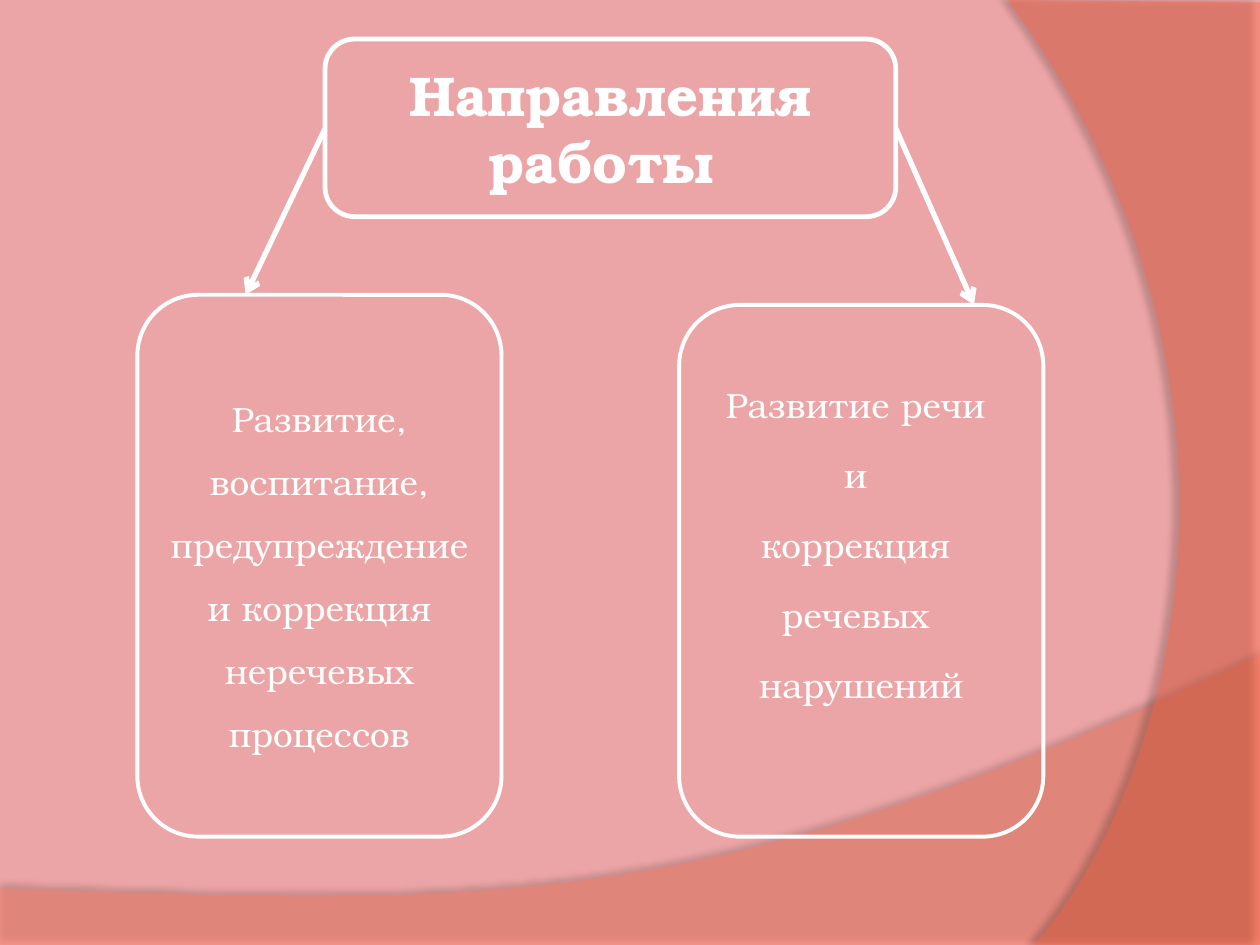
from dataclasses import dataclass

from lxml import etree
from pptx import Presentation
from pptx import util as u
from pptx.dml.color import RGBColor
from pptx.enum import shapes, text
from pptx.oxml import ns

COLORS = {
    "background": "ECA5A6",
    "bottom wave": "FF7E66",
    "side wave": "FF6542",
    "text": "FFFFFF",
    "shadow": "000000",
}
FONT = "TeX Gyre Bonum"
CURVE_STEPS = 32


@dataclass
class Wave:
    color: str
    opacity: int
    corners: list[tuple[float, float]]
    curve: list[tuple[float, float]]  # cubic Bezier from the last corner
    shadow_opacity: int
    shadow_distance: float
    shadow_angle: int


@dataclass
class Panel:
    left: float
    top: float
    width: float
    height: float
    paragraphs: list[str]
    size: int = 20
    bold: bool = False
    outline: float = 2.25
    line_spacing: float = 1.5
    space_before: float = 0
    bottom_inset: float = 0.05


@dataclass
class Arrow:
    start: tuple[float, float]
    end: tuple[float, float]


WAVES = [
    Wave("bottom wave", 45, [(0, 7.05), (0, 7.51), (10, 7.51), (10, 5.2)],
         [(5.59, 7.29), (3.91, 7.19), (0, 7.05)], 35, 3.5, 270),
    Wave("side wave", 40, [(8, 0), (10, 0.02), (10, 7.5), (8.21, 7.5)],
         [(9.35, 6.19), (10.18, 3), (8, 0)], 45, 4, 180),
]
PANELS = [
    Panel(2.58, 0.31, 4.53, 1.41, ["Направления работы "],
          size=32, bold=True, outline=2.75, line_spacing=1),
    Panel(1.09, 2.34, 2.89, 4.3,
          ["Развитие, воспитание, предупреждение и коррекция неречевых процессов"]),
    Panel(5.39, 2.42, 2.89, 4.22,
          ["Развитие речи ", "и ", "коррекция ", "речевых ", "нарушений"],
          space_before=4, bottom_inset=0.63),
]
ARROWS = [
    Arrow((2.58, 1.02), (1.95, 2.34)),
    Arrow((7.11, 1.02), (7.73, 2.42)),
]


def rgb(name: str) -> RGBColor:
    return RGBColor.from_string(COLORS[name])


def add_xml(parent, tag: str, **attributes):
    values = {key: str(value) for key, value in attributes.items()}
    return etree.SubElement(parent, ns.qn(tag), values)


def bezier(points: list[tuple[float, float]]) -> list[tuple[float, float]]:
    """Points along a cubic curve, without its first point."""
    samples = []
    for step in range(1, CURVE_STEPS + 1):
        t = step / CURVE_STEPS
        weights = ((1 - t) ** 3, 3 * t * (1 - t) ** 2, 3 * t**2 * (1 - t), t**3)
        samples.append(tuple(sum(w * point[axis] for w, point in zip(weights, points))
                             for axis in (0, 1)))
    return samples


def draw_wave(page, wave: Wave) -> None:
    outline = wave.corners + bezier([wave.corners[-1], *wave.curve])
    vertices = [(u.Inches(x), u.Inches(y)) for x, y in outline]
    builder = page.shapes.build_freeform(*vertices[0])
    builder.add_line_segments(vertices[1:], close=True)
    shape = builder.convert_to_shape()
    shape.fill.solid()
    shape.fill.fore_color.rgb = rgb(wave.color)
    shape.line.fill.background()
    shape.shadow.inherit = False

    # Transparency and soft shadow
    properties = shape.element.spPr
    fill_color = properties.find(ns.qn("a:solidFill")).find(ns.qn("a:srgbClr"))
    add_xml(fill_color, "a:alpha", val=wave.opacity * 1000)
    shadow = add_xml(properties.find(ns.qn("a:effectLst")), "a:outerShdw",
                     blurRad=u.Pt(4), dist=u.Pt(wave.shadow_distance),
                     dir=wave.shadow_angle * 60000, algn="ctr", rotWithShape=0)
    shadow_color = add_xml(shadow, "a:srgbClr", val=COLORS["shadow"])
    add_xml(shadow_color, "a:alpha", val=wave.shadow_opacity * 1000)


def draw_panel(page, panel: Panel) -> None:
    box = page.shapes.add_shape(
        shapes.MSO_SHAPE.ROUNDED_RECTANGLE, u.Inches(panel.left), u.Inches(panel.top),
        u.Inches(panel.width), u.Inches(panel.height))
    box.shadow.inherit = False
    box.fill.background()
    box.line.color.rgb = rgb("text")
    box.line.width = u.Pt(panel.outline)

    frame = box.text_frame
    frame.word_wrap = True
    frame.vertical_anchor = text.MSO_ANCHOR.MIDDLE
    frame.margin_bottom = u.Inches(panel.bottom_inset)
    frame.text = "\n".join(panel.paragraphs)
    for para in frame.paragraphs:
        para.alignment = text.PP_ALIGN.CENTER
        para.line_spacing = panel.line_spacing
        para.space_before = u.Pt(panel.space_before)
        for span in para.runs:
            span.font.name = FONT
            span.font.size = u.Pt(panel.size)
            span.font.bold = panel.bold
            span.font.color.rgb = rgb("text")


def draw_arrow(page, arrow: Arrow) -> None:
    ends = [u.Inches(value) for value in (*arrow.start, *arrow.end)]
    connector = page.shapes.add_connector(shapes.MSO_CONNECTOR.STRAIGHT, *ends)
    connector.line.color.rgb = rgb("text")
    connector.line.width = u.Pt(3)
    properties = connector.element.spPr
    add_xml(properties.find(ns.qn("a:ln")), "a:tailEnd", type="arrow")
    add_xml(properties, "a:effectLst")


def main() -> None:
    deck = Presentation()
    deck.slide_width, deck.slide_height = u.Inches(10), u.Inches(7.5)
    page = deck.slides.add_slide(deck.slide_layouts[6])
    page.background.fill.solid()
    page.background.fill.fore_color.rgb = rgb("background")

    # Backdrop, then the heading with its two branches
    for wave in WAVES:
        draw_wave(page, wave)
    for panel in PANELS:
        draw_panel(page, panel)
    for arrow in ARROWS:
        draw_arrow(page, arrow)

    deck.save("out.pptx")


if __name__ == "__main__":
    main()
